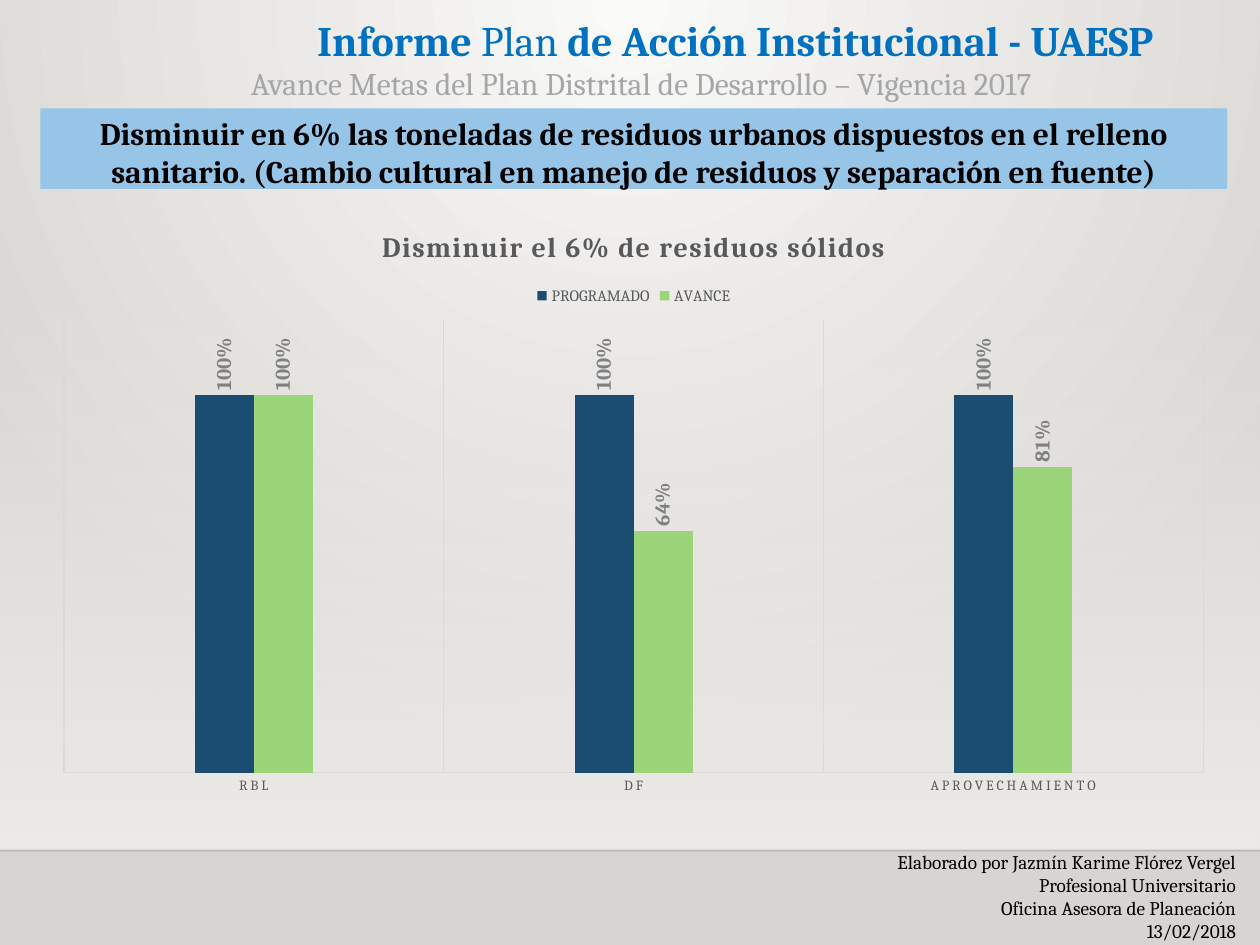
from lxml.etree import SubElement
from pptx import Presentation
from pptx.chart.data import CategoryChartData
from pptx.dml.color import RGBColor
from pptx.enum.chart import (XL_CHART_TYPE, XL_LABEL_POSITION, XL_LEGEND_POSITION,
                             XL_TICK_MARK)
from pptx.enum.shapes import MSO_CONNECTOR, MSO_SHAPE
from pptx.enum.text import PP_ALIGN
from pptx.oxml.ns import qn
from pptx.util import Inches, Pt

FONT = "Cambria"
WIDTH, HEIGHT = 10, 7.5
LEFT, CONTENT_WIDTH = 0.32, 9.42
FOOTER_TOP = 6.75


def color(value):
    return RGBColor.from_string(value)


def inches(*lengths):
    return [Inches(length) for length in lengths]


def style_font(font, size, hue, bold=False):
    font.name, font.size, font.bold = FONT, Pt(size), bold
    font.color.rgb = color(hue)


def set_alpha(color_parent, percent):
    """Make the only RGB colour inside the element partly transparent."""
    rgb = next(color_parent.iter(qn("a:srgbClr")))
    SubElement(rgb, qn("a:alpha"), val=str(percent * 1000))


def set_gradient(fill, first, last):
    fill.gradient()
    for stop, hue in zip(fill.gradient_stops, (first, last)):
        stop.color.rgb = color(hue)


def paint_background(page):
    fill = page.background.fill
    set_gradient(fill, "FAFAF9", "D7D5D2")
    gradient = next(page._element.iter(qn("a:gradFill")))
    gradient.remove(gradient.find(qn("a:lin")))
    path = SubElement(gradient, qn("a:path"), path="circle")
    SubElement(path, qn("a:fillToRect"), l="43000", t="0", r="43000", b="100000")


def add_floor(page):
    """Fading panel above the footer, closed by a thin line."""
    panel = page.shapes.add_shape(MSO_SHAPE.RECTANGLE, *inches(0, 2.2, WIDTH, FOOTER_TOP - 2.2))
    panel.shadow.inherit = False
    panel.line.fill.background()
    set_gradient(panel.fill, "EDEBE7", "EDEBE7")
    panel.fill.gradient_angle = 270
    set_alpha(next(panel._element.iter(qn("a:gs"))), 0)

    edge = page.shapes.add_connector(
        MSO_CONNECTOR.STRAIGHT, *inches(0, FOOTER_TOP, WIDTH, FOOTER_TOP))
    edge.line.width = Pt(1)
    edge.line.color.rgb = color("000001")
    properties = edge._element.spPr
    set_alpha(properties, 20)
    SubElement(properties, qn("a:effectLst"))


def write_text(box, paragraphs, size, hue, align=PP_ALIGN.CENTER, wrap=True):
    """Fill a box; each paragraph is a list of (text, bold) spans."""
    frame = box.text_frame
    frame.word_wrap = wrap
    for index, spans in enumerate(paragraphs):
        para = frame.add_paragraph() if index else frame.paragraphs[0]
        para.alignment = align
        for text, bold in spans:
            span = para.add_run()
            span.text = text
            style_font(span.font, size, hue, bold)


def add_text(page, place, paragraphs, size, hue, **options):
    write_text(page.shapes.add_textbox(*inches(*place)), paragraphs, size, hue, **options)


def add_banner(page, text):
    banner = page.shapes.add_shape(
        MSO_SHAPE.RECTANGLE, *inches(LEFT, 0.86, CONTENT_WIDTH, 0.64))
    banner.shadow.inherit = False
    banner.fill.solid()
    banner.fill.fore_color.rgb = color("96C5E7")
    banner.line.fill.background()
    banner.text_frame._txBody.bodyPr.set("anchor", "t")
    write_text(banner, [[(text, True)]], 18, "000000")


def set_plot_area(chart, **shares):
    """Place the inner plot area by shares of the chart's size."""
    plot_area = chart._chartSpace.chart.plotArea
    layout = plot_area.find(qn("c:layout"))
    if layout is None:
        layout = SubElement(plot_area, qn("c:layout"))
        plot_area.insert(0, layout)
    manual = SubElement(layout, qn("c:manualLayout"))
    settings = {"layoutTarget": "inner", "xMode": "edge", "yMode": "edge", **shares}
    for name, value in settings.items():
        SubElement(manual, qn(f"c:{name}"), val=str(value))


def style_series(series, hue):
    series.format.fill.solid()
    series.format.fill.fore_color.rgb = color(hue)
    labels = series.data_labels
    labels.show_value = True
    labels.number_format, labels.number_format_is_linked = "0%", False
    labels.position = XL_LABEL_POSITION.OUTSIDE_END
    style_font(labels.font, 12, "808080", True)
    body = labels._element.find(qn("c:txPr")).find(qn("a:bodyPr"))
    body.set("rot", "-5400000")
    body.set("vert", "horz")


def style_axes(chart):
    category = chart.category_axis
    category.major_tick_mark = category.minor_tick_mark = XL_TICK_MARK.NONE
    category.has_major_gridlines = True
    style_font(category.tick_labels.font, 8, "595959")
    category.tick_labels.font._element.set("spc", "150")
    for line in (category.format.line, category.major_gridlines.format.line):
        line.color.rgb = color("D9D9D9")
        line.width = Pt(0.75)
    value = chart.value_axis
    value.minimum_scale, value.maximum_scale = 0, 1.2
    value.has_major_gridlines = False
    value.visible = False


def add_progress_chart(page):
    data = CategoryChartData(number_format="0%")
    data.categories = ["RBL", "DF", "APROVECHAMIENTO"]
    data.add_series("PROGRAMADO", (1, 1, 1))
    data.add_series("AVANCE", (1, 0.64, 0.81))
    chart = page.shapes.add_chart(
        XL_CHART_TYPE.COLUMN_CLUSTERED, *inches(LEFT, 1.63, CONTENT_WIDTH, 4.79), data).chart
    style_font(chart.font, 10, "000000")

    chart.has_title = True
    span = chart.chart_title.text_frame.paragraphs[0].add_run()
    span.text = "Disminuir el 6% de residuos sólidos"
    style_font(span.font, 16, "595959", True)
    span.font._element.set("spc", "100")

    chart.has_legend = True
    chart.legend.position = XL_LEGEND_POSITION.TOP
    chart.legend.include_in_layout = False
    style_font(chart.legend.font, 9, "595959")

    plot = chart.plots[0]
    plot.gap_width, plot.overlap, plot.vary_by_categories = 444, 0, False
    for series, hue in zip(plot.series, ("1A4D71", "9CD579")):
        style_series(series, hue)
    style_axes(chart)
    set_plot_area(chart, x=0.02, y=0.19, w=0.96, h=0.75)


def main():
    deck = Presentation()
    deck.slide_width, deck.slide_height = inches(WIDTH, HEIGHT)
    page = deck.slides.add_slide(deck.slide_layouts[6])
    paint_background(page)
    add_floor(page)
    add_text(page, (2.22, 0.07, 7.23, 0.5),
             [[("Informe ", True), ("Plan", False),
               (" de Acción Institucional - UAESP", True)]],
             24, "0070C0", wrap=False)
    add_text(page, (1.02, 0.46, 8.14, 0.4),
             [[("Avance Metas del Plan Distrital de Desarrollo – Vigencia 2017", False)]],
             18, "A6A6A6")
    add_banner(page, "Disminuir en 6% las toneladas de residuos urbanos dispuestos en el "
                     "relleno sanitario. (Cambio cultural en manejo de residuos y "
                     "separación en fuente)")
    add_progress_chart(page)
    credits = ("Elaborado por Jazmín Karime Flórez Vergel", "Profesional Universitario",
               "Oficina Asesora de Planeación", "13/02/2018")
    add_text(page, (4.51, 6.7, 5.4, 0.84), [[(line, False)] for line in credits],
             11, "000000", align=PP_ALIGN.RIGHT)
    deck.save("out.pptx")


if __name__ == "__main__":
    main()
